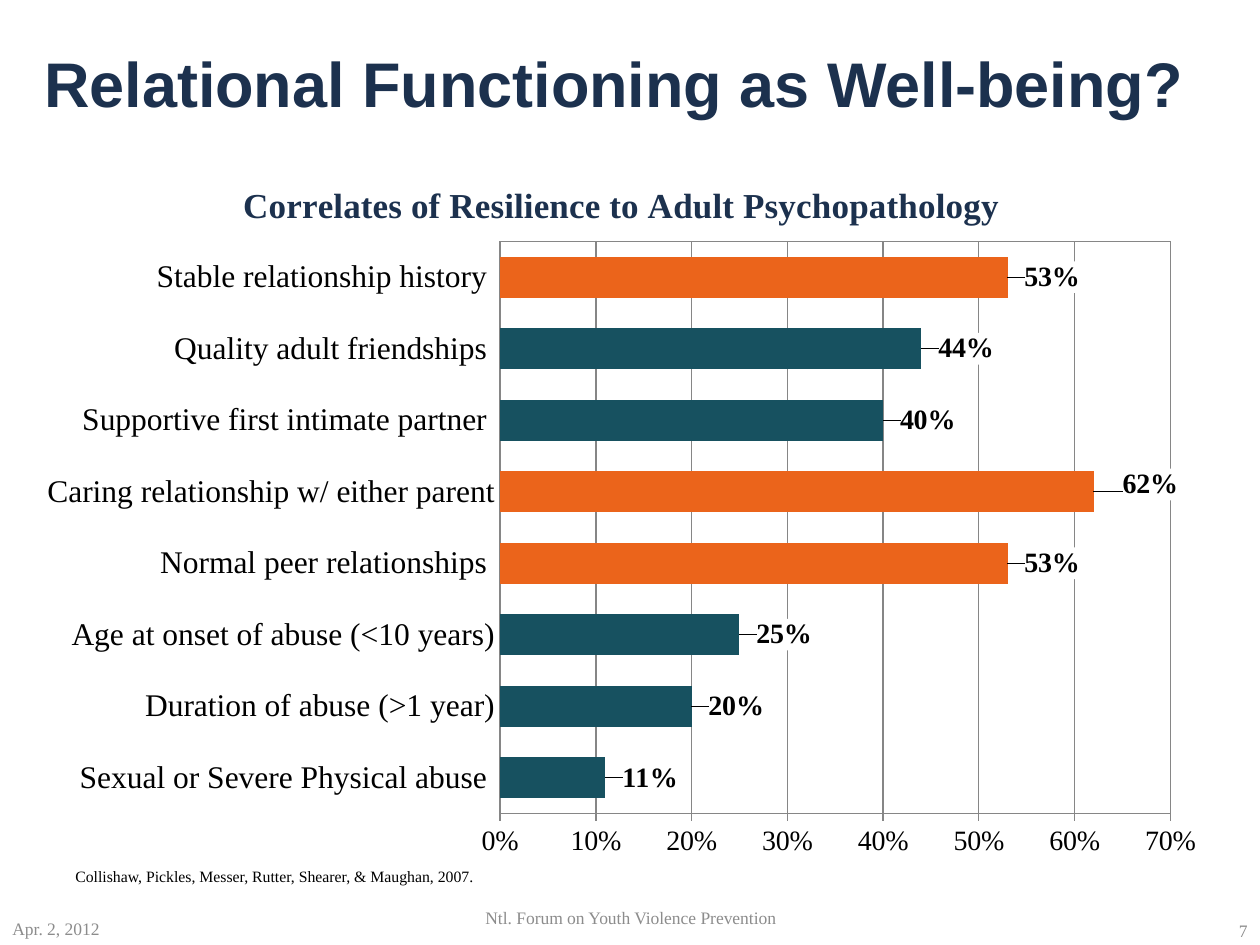
from lxml.etree import fromstring
from pptx import Presentation
from pptx.chart.data import CategoryChartData
from pptx.dml.color import RGBColor
from pptx.enum.chart import XL_CHART_TYPE, XL_LABEL_POSITION, XL_TICK_MARK
from pptx.enum.text import MSO_ANCHOR, PP_ALIGN
from pptx.util import Cm, Pt

NAVY = RGBColor(0x1C, 0x31, 0x4E)
TEAL = RGBColor(0x17, 0x51, 0x60)
ORANGE = RGBColor(0xEB, 0x64, 0x1B)
GRAY = RGBColor(0x8C, 0x8C, 0x8C)
GRID = RGBColor(0x86, 0x86, 0x86)
BLACK = RGBColor(0, 0, 0)
SERIF = "Times New Roman"
NS = ('xmlns:c="http://schemas.openxmlformats.org/drawingml/2006/chart" '
      'xmlns:a="http://schemas.openxmlformats.org/drawingml/2006/main"')

TEXTS = [
    ("Relational Functioning as Well-being?", (0.64, 0.76, 24.13, 1.78),
     "Arial", 36, True, NAVY, PP_ALIGN.LEFT, MSO_ANCHOR.MIDDLE),
    ("Collishaw, Pickles, Messer, Rutter, Shearer, & Maughan, 2007.", (1.27, 17.35, 22.66, 0.64),
     SERIF, 9, False, BLACK, PP_ALIGN.LEFT, MSO_ANCHOR.TOP),
    ("Apr. 2, 2012", (0, 18.21, 5.92, 1.02),
     SERIF, 10, False, GRAY, PP_ALIGN.LEFT, MSO_ANCHOR.MIDDLE),
    ("Ntl. Forum on Youth Violence Prevention", (8.69, 17.98, 8.05, 1.02),
     SERIF, 10, False, GRAY, PP_ALIGN.CENTER, MSO_ANCHOR.MIDDLE),
    ("7", (19.48, 18.24, 5.92, 1.02),
     SERIF, 10, False, GRAY, PP_ALIGN.RIGHT, MSO_ANCHOR.MIDDLE),
]
CHART_TITLE = "Correlates of Resilience to Adult Psychopathology"
CHART_BOX = (0.43, 2.97, 24.13, 14.6)
BARS = [
    ("Sexual or Severe Physical abuse ", 0.11, TEAL, (0.01, 0)),
    ("Duration of abuse (>1 year)", 0.2, TEAL, (0.01, 0)),
    ("Age at onset of abuse (<10 years)", 0.25, TEAL, (0.01, 0)),
    ("Normal peer relationships ", 0.53, ORANGE, (0.01, 0)),
    ("Caring relationship w/ either parent", 0.62, ORANGE, (0.02, -0.01)),
    ("Supportive first intimate partner ", 0.4, TEAL, (0.01, 0)),
    ("Quality adult friendships ", 0.44, TEAL, (0.01, 0)),
    ("Stable relationship history ", 0.53, ORANGE, (0.01, 0)),
]


def add_text(s, text, box, font, size, bold, color, align, anchor):
    tf = s.shapes.add_textbox(*map(Cm, box)).text_frame
    tf.word_wrap = True
    tf.vertical_anchor = anchor
    p = tf.paragraphs[0]
    p.alignment = align
    r = p.add_run()
    r.text = text
    set_font(r.font, size, color, bold, font)


def set_font(font, size, color=BLACK, bold=False, name=SERIF):
    font.name = name
    font.size = Pt(size)
    font.bold = bold
    font.color.rgb = color


def chart_xml(body):
    return fromstring(body.replace(">", f" {NS}>", 1))


def set_layout(parent, index, x, y, size=None, edge=True):
    for old in parent.xpath("c:layout"):
        parent.remove(old)
    values = [("layoutTarget", "inner")] if size else []
    if edge:
        values += [("xMode", "edge"), ("yMode", "edge")]
    values += [("x", x), ("y", y)]
    if size:
        values += zip("wh", size)
    inner = "".join(f'<c:{tag} val="{v}"/>' for tag, v in values)
    parent.insert(index, chart_xml(
        f"<c:layout><c:manualLayout>{inner}</c:manualLayout></c:layout>"))


def add_bars(s):
    data = CategoryChartData(number_format="0%")
    data.categories = [bar[0] for bar in BARS]
    data.add_series("Series 1", [bar[1] for bar in BARS])
    chart = s.shapes.add_chart(
        XL_CHART_TYPE.BAR_CLUSTERED, *map(Cm, CHART_BOX), data).chart
    set_font(chart.font, 18)
    chart.has_legend = False

    p = chart.chart_title.text_frame.paragraphs[0]
    r = p.add_run()
    r.text = CHART_TITLE
    set_font(r.font, 20, NAVY, True)
    set_layout(chart.chart_title._element, 1, 0.18, 0.04)

    area = chart._chartSpace.chart.plotArea
    set_layout(area, 0, 0.4, 0.13, (0.56, 0.79))
    area.append(chart_xml(
        f'<c:spPr><a:noFill/><a:ln w="9525"><a:solidFill><a:srgbClr val="{GRID}"/>'
        '</a:solidFill></a:ln></c:spPr>'))

    cat, val = chart.category_axis, chart.value_axis
    cat.major_tick_mark = XL_TICK_MARK.NONE
    val.major_tick_mark = XL_TICK_MARK.OUTSIDE
    val.minimum_scale, val.maximum_scale, val.major_unit = 0, 0.7, 0.1
    val.has_major_gridlines = True
    val.tick_labels.number_format = "0%"
    val.tick_labels.number_format_is_linked = False
    set_font(cat.tick_labels.font, 18)
    set_font(val.tick_labels.font, 16)
    for line in (cat.format.line, val.format.line, val.major_gridlines.format.line):
        line.color.rgb = GRID
        line.width = Pt(0.75)

    plot = chart.plots[0]
    plot.gap_width = 75
    plot.vary_by_categories = False
    series = plot.series[0]
    series.format.fill.solid()
    series.format.fill.fore_color.rgb = TEAL
    for i, (_, _, color, shift) in enumerate(BARS):
        point = series.points[i]
        point.format.fill.solid()
        point.format.fill.fore_color.rgb = color
        label = point.data_label
        set_font(label.font, 16, bold=True)
        label.position = XL_LABEL_POSITION.OUTSIDE_END
        d_lbl = series._element.xpath("c:dLbls/c:dLbl")[i]
        for old in d_lbl.xpath("c:spPr"):
            d_lbl.remove(old)
        set_layout(d_lbl, 1, *shift, edge=False)
        d_lbl.insert(2, chart_xml('<c:numFmt formatCode="0%" sourceLinked="0"></c:numFmt>'
                                  .replace(' formatCode="0%" sourceLinked="0"', "")))
        d_lbl[2].set("formatCode", "0%")
        d_lbl[2].set("sourceLinked", "0")
        d_lbl.insert(3, chart_xml(
            '<c:spPr><a:solidFill><a:srgbClr val="FFFFFF"/></a:solidFill></c:spPr>'))


prs = Presentation()
prs.slide_width, prs.slide_height = Cm(25.4), Cm(19.05)
s = prs.slides.add_slide(prs.slide_layouts[6])
add_bars(s)
for item in TEXTS:
    add_text(s, *item)
prs.save("out.pptx")
